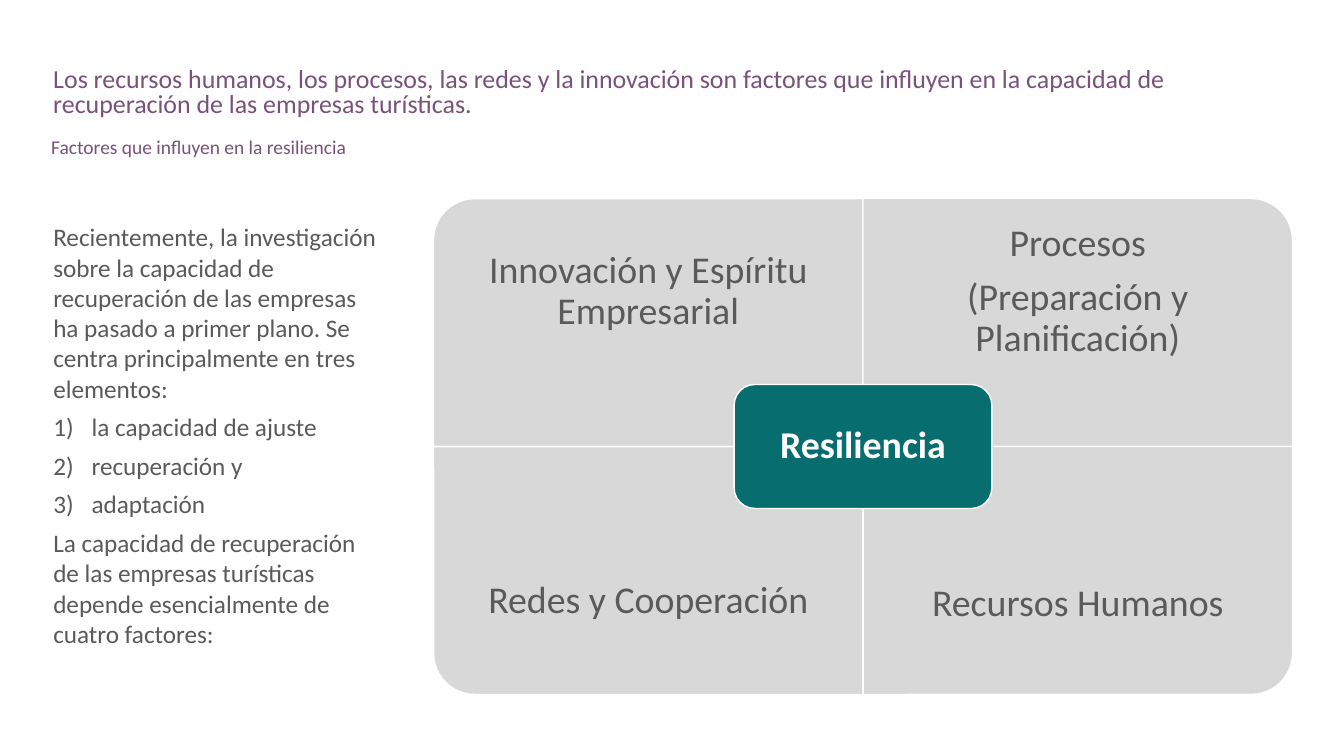
from dataclasses import dataclass

from pptx import Presentation
from pptx.dml.color import RGBColor
from pptx.enum.shapes import MSO_SHAPE as SHAPE
from pptx.enum.text import MSO_ANCHOR as ANCHOR, PP_ALIGN as ALIGN
from pptx.oxml.ns import qn
from pptx.util import Inches, Pt


@dataclass(frozen=True)
class Theme:
    font: str = "Calibri"
    purple: str = "79527B"
    grey: str = "595A59"
    panel: str = "D8D8D8"
    teal: str = "086D6E"
    white: str = "FFFFFF"
    title_size: float = 18.5
    subtitle_size: float = 13.9
    body_size: float = 18
    factor_size: float = 27


class SlideBuilder:
    def __init__(self, slide, theme):
        self.slide = slide
        self.theme = theme

    def set_text(self, sp, lines, size, color, bold=False, align=ALIGN.LEFT,
                 anchor=ANCHOR.TOP, spacing=1.0, gap=0, inset=(0.1, 0.05)):
        """Fill a shape with paragraphs; gap is the space between them in points."""
        tf = sp.text_frame
        tf.word_wrap = True
        tf.vertical_anchor = anchor
        tf.margin_left = tf.margin_right = Inches(inset[0])
        tf.margin_top = tf.margin_bottom = Inches(inset[1])
        tf.text = "\n".join(lines)
        for i, p in enumerate(tf.paragraphs):
            p.alignment = align
            p.line_spacing = spacing
            if i:
                p.space_before = Pt(gap)
            for r in p.runs:
                r.font.name = self.theme.font
                r.font.size = Pt(size)
                r.font.bold = bold
                r.font.color.rgb = RGBColor.from_string(color)
        return tf

    def text(self, x, y, w, h, lines, size, color, **style):
        sp = self.slide.shapes.add_textbox(Inches(x), Inches(y), Inches(w), Inches(h))
        return self.set_text(sp, lines, size, color, **style)

    def panel(self, kind, x, y, w, h, fill, rotation=0):
        """Add a white-edged panel covering the given area after its rotation."""
        sw, sh = (h, w) if rotation % 180 else (w, h)
        sp = self.slide.shapes.add_shape(
            kind, Inches(x + (w - sw) / 2), Inches(y + (h - sh) / 2),
            Inches(sw), Inches(sh))
        sp.rotation = rotation
        sp.shadow.inherit = False
        sp.fill.solid()
        sp.fill.fore_color.rgb = RGBColor.from_string(fill)
        sp.line.color.rgb = RGBColor.from_string(self.theme.white)
        sp.line.width = Pt(1)
        return sp

    def number(self, p, indent):
        """Number a paragraph as 1), 2), 3) with a hanging indent."""
        pPr = p._p.get_or_add_pPr()
        pPr.set("marL", str(Inches(indent)))
        pPr.set("indent", str(-Inches(indent)))
        font = pPr.makeelement(qn("a:buFont"), {"typeface": "+mj-lt"})
        auto = pPr.makeelement(qn("a:buAutoNum"), {"type": "arabicParenR"})
        pPr.extend([font, auto])


INTRO = [
    "Recientemente, la investigación sobre la capacidad de recuperación de las "
    "empresas ha pasado a primer plano. Se centra principalmente en tres elementos:",
    "la capacidad de ajuste",
    "recuperación y",
    "adaptación",
    "La capacidad de recuperación de las empresas turísticas depende "
    "esencialmente de cuatro factores:",
]
# column, row, rotation that turns the round corner outwards, line spacing, text
FACTORS = [
    (0, 0, 270, 0.9, ["Innovación y Espíritu Empresarial"]),
    (1, 0, 0, 0.9, ["Procesos", "(Preparación y Planificación)"]),
    (0, 1, 180, 0.9, ["Redes y Cooperación"]),
    (1, 1, 90, 1.0, ["Recursos Humanos"]),
]
LEFT, TOP, CELL_W, CELL_H = 4.3, 1.97, 4.26, 2.46
LABEL_H = CELL_H * 0.75
CORE_W, CORE_H = CELL_W * 0.6, CELL_H / 2


def draw_matrix(b):
    t = b.theme
    for col, row, rotation, spacing, lines in FACTORS:
        x, y = LEFT + col * CELL_W, TOP + row * CELL_H
        b.panel(SHAPE.ROUND_1_RECTANGLE, x, y, CELL_W, CELL_H, t.panel, rotation)
        b.text(x, y + row * (CELL_H - LABEL_H), CELL_W, LABEL_H, lines,
               t.factor_size, t.grey, align=ALIGN.CENTER, anchor=ANCHOR.MIDDLE,
               spacing=spacing, gap=9.4, inset=(0.21, 0.21))
    core = b.panel(SHAPE.ROUNDED_RECTANGLE, LEFT + CELL_W - CORE_W / 2,
                   TOP + CELL_H - CORE_H / 2, CORE_W, CORE_H, t.teal)
    b.set_text(core, ["Resiliencia"], t.factor_size, t.white, bold=True,
               align=ALIGN.CENTER, anchor=ANCHOR.MIDDLE, spacing=0.9,
               inset=(0.11, 0.11))


def main():
    prs = Presentation()
    prs.slide_width, prs.slide_height = Inches(13.33), Inches(7.5)
    b = SlideBuilder(prs.slides.add_slide(prs.slide_layouts[6]), Theme())
    t = b.theme
    draw_matrix(b)
    intro = b.text(0.43, 1.79, 3.49, 5.05, INTRO, t.body_size, t.grey,
                   anchor=ANCHOR.MIDDLE, gap=6)
    for p in intro.paragraphs[1:4]:
        b.number(p, 0.38)
    b.text(0.43, 0.63, 12.54, 0.64,
           ["Los recursos humanos, los procesos, las redes y la innovación son factores "
            "que influyen en la capacidad de recuperación de las empresas turísticas."],
           t.title_size, t.purple, spacing=0.8)
    b.text(0.41, 1.35, 12.56, 0.28, ["Factores que influyen en la resiliencia"],
           t.subtitle_size, t.purple, spacing=0.7)
    prs.save("out.pptx")


if __name__ == "__main__":
    main()
